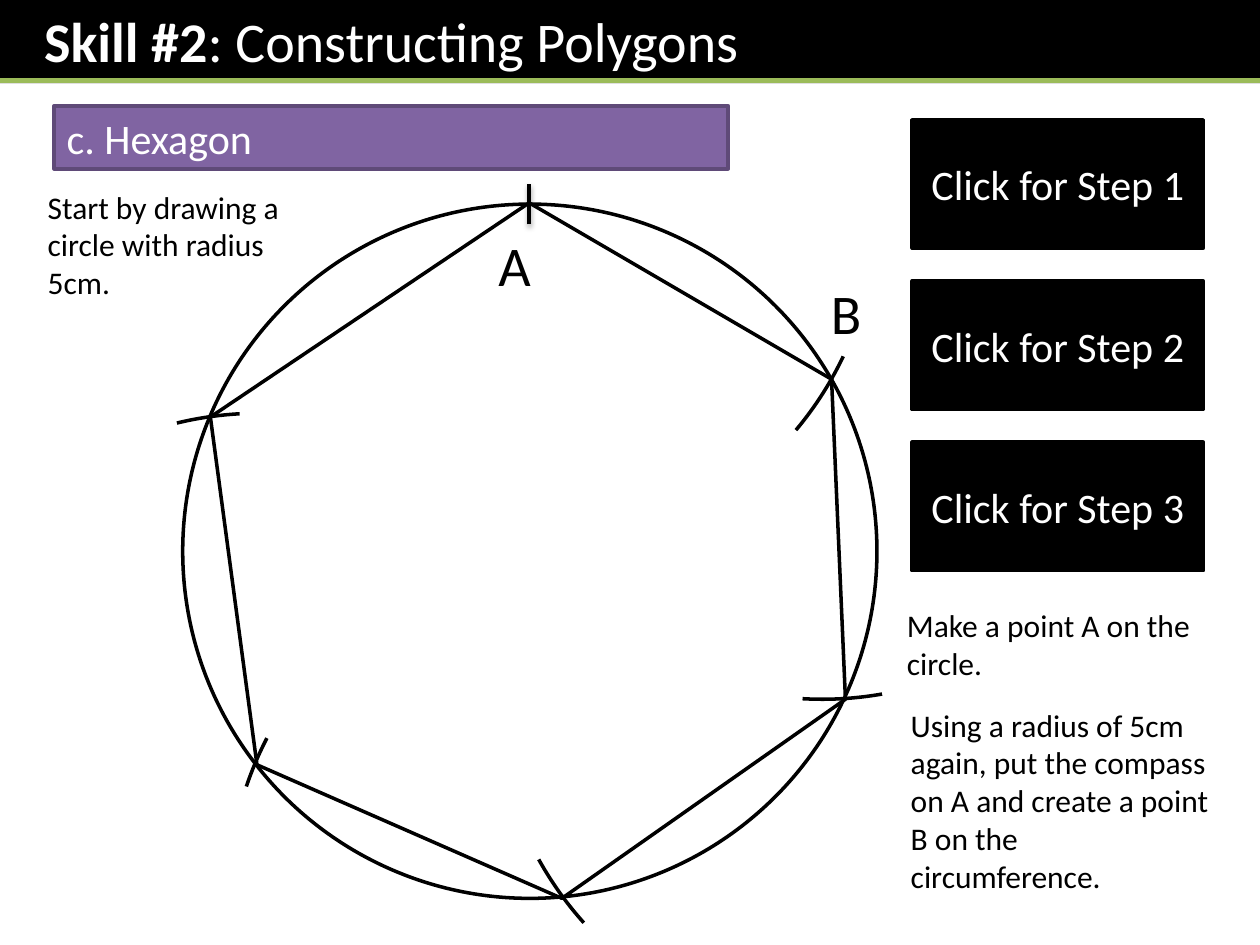
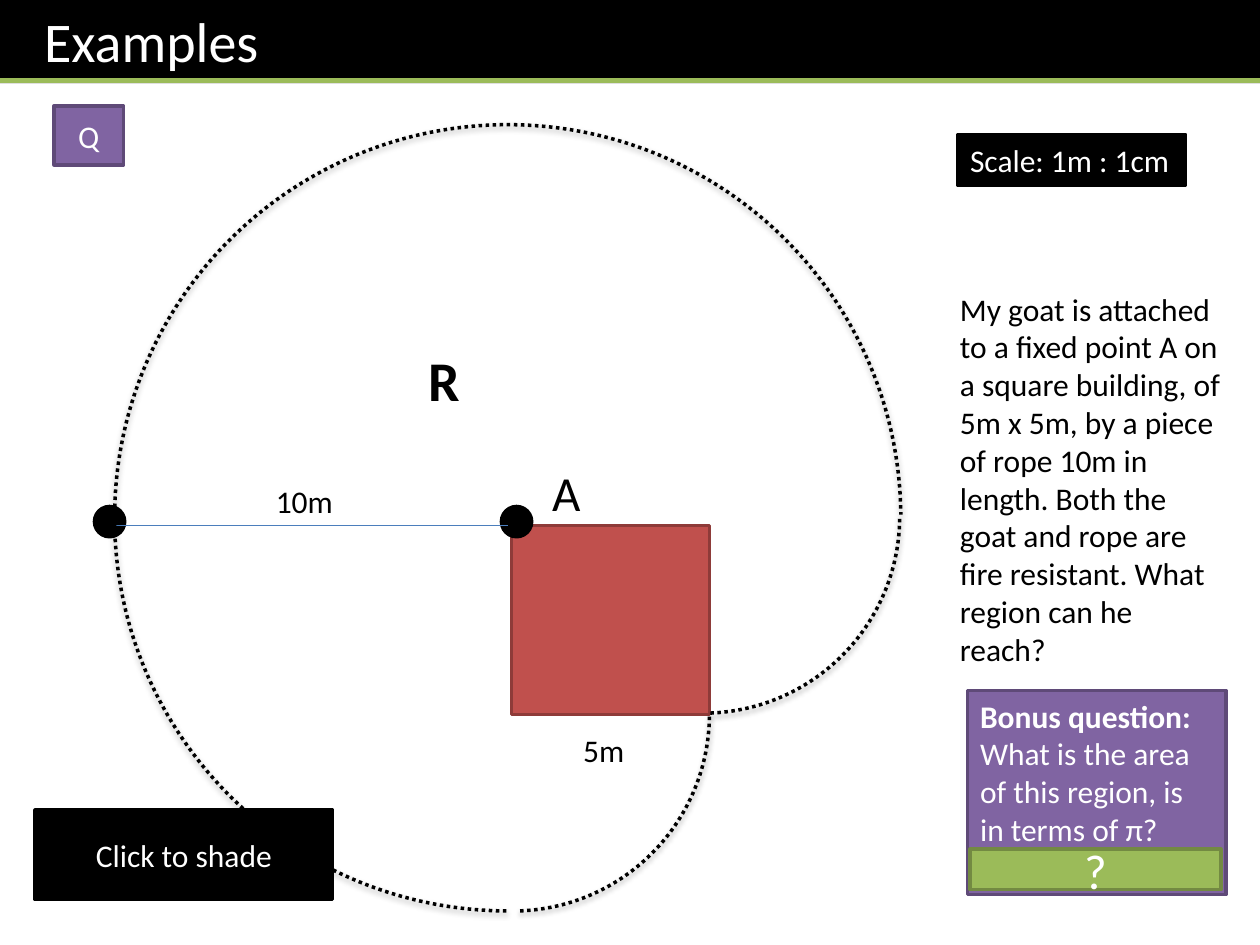
from lxml import etree
from pptx import Presentation
from pptx.dml.color import RGBColor
from pptx.enum.dml import MSO_LINE
from pptx.enum.shapes import MSO_CONNECTOR, MSO_SHAPE as SHAPE
from pptx.enum.text import MSO_ANCHOR as ANCHOR, MSO_AUTO_SIZE as FIT, PP_ALIGN as ALIGN
from pptx.oxml.ns import qn
from pptx.util import Inches, Pt

BLACK, WHITE, GREEN = "000000", "FFFFFF", "9BBB59"
PURPLE, PURPLE_EDGE = "8064A2", "5F4A78"
FONT = "Calibri"
rgb = RGBColor.from_string


def style(sp, fill=None, line=BLACK, width=2, dash=None, shadow=False):
    if fill:
        sp.fill.solid()
        sp.fill.fore_color.rgb = rgb(fill)
    elif hasattr(sp, "fill"):
        sp.fill.background()
    sp.line.color.rgb = rgb(line)
    sp.line.width = Pt(width)
    if dash:
        sp.line.dash_style = dash
    effects = etree.SubElement(sp._element.spPr, qn("a:effectLst"))
    if shadow:
        outer = etree.SubElement(effects, qn("a:outerShdw"), blurRad=str(Pt(3.1)),
                                 dist=str(Pt(1.6)), dir="5400000", rotWithShape="0")
        color = etree.SubElement(outer, qn("a:srgbClr"), val=BLACK)
        etree.SubElement(color, qn("a:alpha"), val="38000")


def write(sp, paragraphs, size, color=BLACK, align=ALIGN.LEFT, anchor=ANCHOR.TOP):
    tf = sp.text_frame
    tf.word_wrap = True
    tf.auto_size = FIT.NONE
    tf.vertical_anchor = anchor
    for i, runs in enumerate(paragraphs):
        p = tf.add_paragraph() if i else tf.paragraphs[0]
        p.alignment = align
        for text, bold in runs:
            r = p.add_run()
            r.text = text
            r.font.name = FONT
            r.font.size = Pt(size)
            r.font.bold = bold
            r.font.color.rgb = rgb(color)


prs = Presentation()
prs.slide_width, prs.slide_height = Inches(10), Inches(7.5)

slides = []
for runs in [[("Skill #2", True), (": Constructing Polygons", False)],
             [("Examples", False)]]:
    slide = prs.slides.add_slide(prs.slide_layouts[5])
    title = slide.shapes.title
    title.left, title.top = Inches(0), Inches(0)
    title.width, title.height = Inches(10), Inches(0.66)
    title.fill.solid()
    title.fill.fore_color.rgb = rgb(BLACK)
    write(title, [runs], 32, WHITE)
    tf = title.text_frame
    tf.margin_left, tf.margin_right = Inches(0.35), Inches(0.1)
    tf.margin_top = tf.margin_bottom = Inches(0.05)
    band = slide.shapes.add_connector(MSO_CONNECTOR.STRAIGHT, Inches(0), Inches(0.64),
                                      Inches(10), Inches(0.64))
    style(band, line=GREEN, width=3)
    slides.append(slide)
hexagon, goat = [slide.shapes for slide in slides]

# Hexagon
radius = 2.755
circle = hexagon.add_shape(SHAPE.OVAL, Inches(1.45), Inches(1.62),
                           Inches(2 * radius), Inches(2 * radius))
style(circle)

compass_marks = [
    (1.45, -1.11, 25.44, 39.94),
    (3.77, 0.04, 80.06, 93.24),
    (3.93, 2.73, 138.12, 150.98),
    (1.81, 4.37, 198.69, 207.37),
    (-0.7, 3.28, 256.34, 266.82),
]
for x, y, start, end in compass_marks:
    arc = hexagon.add_shape(SHAPE.ARC, Inches(x), Inches(y),
                            Inches(2 * radius), Inches(2 * radius))
    arc.adjustments[0], arc.adjustments[1] = start * 0.6, end * 0.6
    style(arc)

tick = hexagon.add_connector(MSO_CONNECTOR.STRAIGHT, Inches(4.2), Inches(1.78),
                             Inches(4.2), Inches(1.46))
style(tick, shadow=True)

vertices = [(4.2, 1.61), (6.6, 3.01), (6.71, 5.55), (4.46, 7.13), (2.04, 6.07), (1.67, 3.31)]
points = [(Inches(x), Inches(y)) for x, y in vertices]
builder = hexagon.build_freeform(*points[0])
builder.add_line_segments(points[1:], close=True)
style(builder.convert_to_shape())

for i in range(3):
    button = hexagon.add_shape(SHAPE.RECTANGLE, Inches(7.24), Inches(0.95 + 1.28 * i),
                               Inches(2.31), Inches(1.02))
    style(button, BLACK)
    write(button, [[(f"Click for Step {i + 1}", False)]], 24, WHITE, ALIGN.CENTER, ANCHOR.MIDDLE)

heading = hexagon.add_shape(SHAPE.RECTANGLE, Inches(0.43), Inches(0.84),
                            Inches(5.35), Inches(0.5))
style(heading, PURPLE, PURPLE_EDGE)
write(heading, [[("c. Hexagon", False)]], 24, WHITE)

# Goat on a rope
building = goat.add_shape(SHAPE.RECTANGLE, Inches(4.06), Inches(4.17), Inches(1.57), Inches(1.5))
style(building, "C0504D", "8E3B39")

for x in (0.75, 3.98):
    dot = goat.add_shape(SHAPE.OVAL, Inches(x), Inches(4.02), Inches(0.24), Inches(0.24))
    style(dot, BLACK)

rope = goat.add_connector(MSO_CONNECTOR.STRAIGHT, Inches(0.91), Inches(4.17),
                          Inches(4.03), Inches(4.17))
style(rope, line="4B7EBC", width=0.75)

for x, y, size, start, end, turn in [(4.02, 2.54, 3.12, 180.63, 268.73, 180),
                                     (2.51, 4.11, 3.12, 180.63, 268.73, 180),
                                     (0.91, 0.99, 6.24, 90.2, 359.55, 0)]:
    reach = goat.add_shape(SHAPE.ARC, Inches(x), Inches(y), Inches(size), Inches(size))
    reach.adjustments[0], reach.adjustments[1] = start * 0.6, end * 0.6
    reach.rotation = turn
    style(reach, dash=MSO_LINE.ROUND_DOT, shadow=True)

bonus = [[("Bonus question:", True)],
         [("What is the area of this region, is in terms of π?", False)]]
boxes = [
    (0.43, 0.84, 0.55, 0.47, PURPLE, PURPLE_EDGE, [[("Q", False)]], 18, ALIGN.CENTER, ANCHOR.MIDDLE),
    (7.6, 1.07, 1.81, 0.4, BLACK, BLACK, [[("Scale: 1m : 1cm", False)]], 18, ALIGN.LEFT, ANCHOR.TOP),
    (7.68, 5.48, 2.05, 1.62, PURPLE, PURPLE_EDGE, bonus, 18, ALIGN.LEFT, ANCHOR.TOP),
    (7.7, 6.74, 1.99, 0.32, GREEN, "738A42", [[("?", False)]], 28, ALIGN.CENTER, ANCHOR.MIDDLE),
    (0.28, 6.43, 2.36, 0.71, BLACK, BLACK, [[("Click to shade", False)]], 18,
     ALIGN.CENTER, ANCHOR.MIDDLE),
]
for x, y, w, h, fill, line, paragraphs, size, align, anchor in boxes:
    box = goat.add_shape(SHAPE.RECTANGLE, Inches(x), Inches(y), Inches(w), Inches(h))
    style(box, fill, line)
    write(box, paragraphs, size, WHITE, align, anchor)

story = ["My goat is attached to a fixed point A on a square building, of",
         "5m x 5m, by a piece of rope 10m in length. Both the goat and rope are fire resistant. "
         "What region can he reach?"]
labels = [
    (hexagon, 6.4, 2.16, 0.63, 0.64, ["B"], 32, False, ALIGN.CENTER),
    (hexagon, 3.77, 1.78, 0.63, 0.64, ["A"], 32, False, ALIGN.CENTER),
    (hexagon, 0.28, 1.44, 2.05, 1.01, ["Start by drawing a circle with radius 5cm."],
     18, False, ALIGN.LEFT),
    (hexagon, 7.1, 4.76, 2.6, 0.71, ["Make a point A on the circle."], 18, False, ALIGN.LEFT),
    (hexagon, 7.13, 5.55, 2.6, 1.62,
     ["Using a radius of 5cm again, put the compass on A and create a point B on the circumference."],
     18, False, ALIGN.LEFT),
    (goat, 7.52, 2.25, 2.28, 3.13, story, 18, False, ALIGN.LEFT),
    (goat, 4.53, 5.75, 0.71, 0.4, ["5m"], 18, False, ALIGN.LEFT),
    (goat, 2.09, 3.78, 0.71, 0.4, ["10m"], 18, False, ALIGN.LEFT),
    (goat, 4.14, 3.62, 0.71, 0.57, ["A"], 28, False, ALIGN.CENTER),
    (goat, 3.3, 2.69, 0.55, 0.64, ["R"], 32, True, ALIGN.LEFT),
]
for shapes, x, y, w, h, texts, size, bold, align in labels:
    label = shapes.add_textbox(Inches(x), Inches(y), Inches(w), Inches(h))
    write(label, [[(text, bold)] for text in texts], size, align=align)

prs.save("out.pptx")
